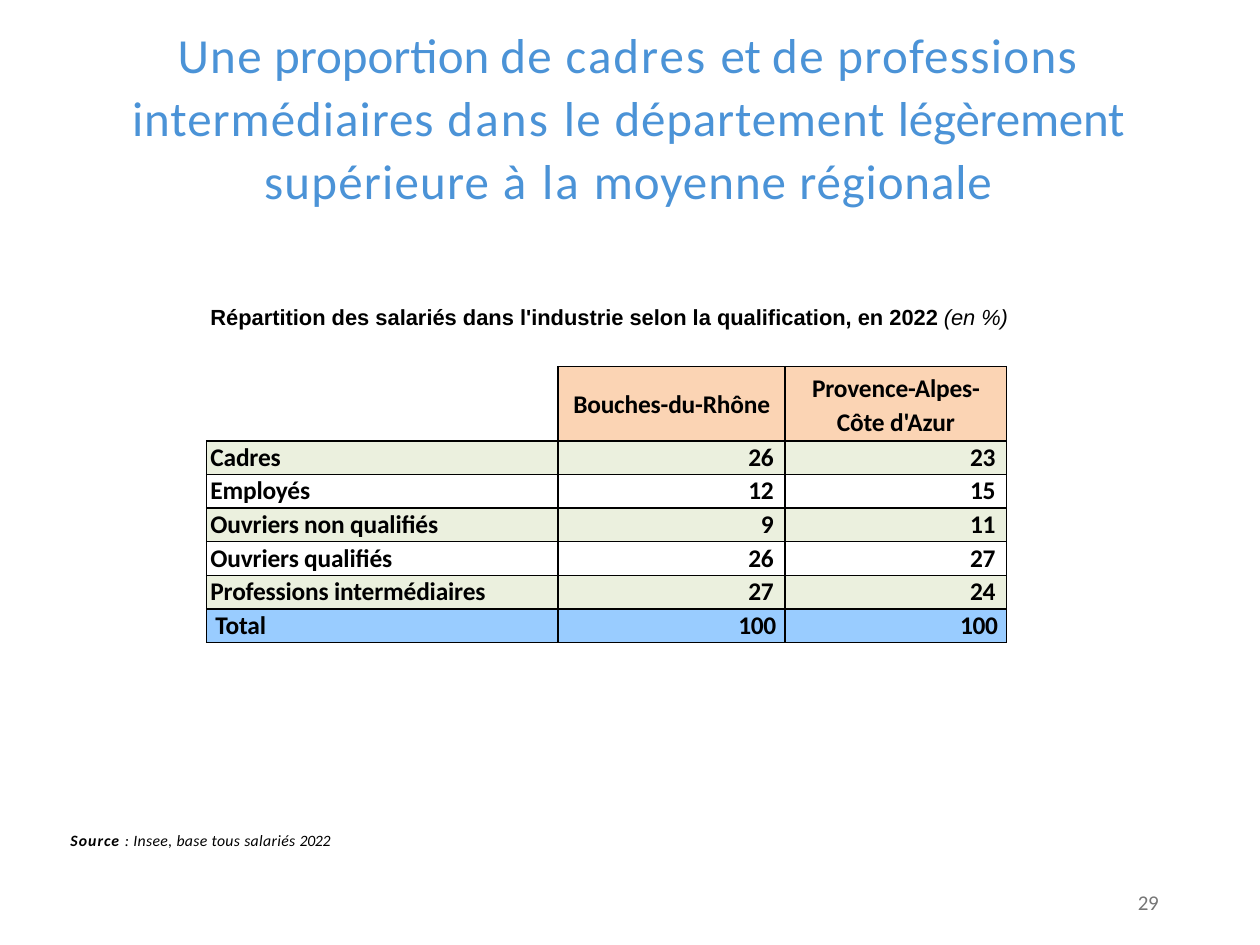
from lxml import etree
from pptx import Presentation
from pptx.dml.color import RGBColor
from pptx.enum.text import MSO_ANCHOR, PP_ALIGN
from pptx.oxml.ns import qn
from pptx.util import Inches, Pt

LEFT, CENTER, RIGHT = PP_ALIGN.LEFT, PP_ALIGN.CENTER, PP_ALIGN.RIGHT
TOP, MIDDLE = MSO_ANCHOR.TOP, MSO_ANCHOR.MIDDLE

BLACK = RGBColor(0x00, 0x00, 0x00)
TITLE_BLUE = RGBColor(0x4B, 0x93, 0xD7)
PAGE_GREY = RGBColor(0x76, 0x76, 0x76)
HEADER_PEACH = RGBColor(0xFB, 0xD4, 0xB4)
BAND_GREEN = RGBColor(0xEB, 0xF0, 0xDE)
TOTAL_BLUE = RGBColor(0x99, 0xCC, 0xFF)

# Each run is (text, letter spacing in points, optional format changes).
TITLE = [
    ("Une", 0.8), (" proportion ", 0), ("de ", 0.8), ("cadres ", 1.2),
    ("et ", 0), ("de professions ", 0.8), ("intermédiaires ", 0.6),
    ("dans ", 1.3), ("le ", 0.8), ("département ", 0.5),
    ("légèrement ", -0.1), ("supérieure ", 0.7), ("à ", 1.4), ("la ", 1.1),
    ("moyenne ", 0.6), ("régionale", 0.5),
]
CAPTION = [
    ("Répartition des salariés dans l'industrie selon la qualification, "
     "en 2022 ", 0),
    ("(en ", 0, {"bold": False, "italic": True}),
    ("%)", -0.2, {"bold": False, "italic": True}),
]
SOURCE = [
    ("Source ", 0.6, {"bold": True}),
    (": Insee, base tous salariés ", 0.2),
    ("2022", -0.2),
]
REGIONS = ["Bouches-du-Rhône", "Provence-Alpes-Côte d'Azur"]
SHARES = [
    ("Cadres", 26, 23),
    ("Employés", 12, 15),
    ("Ouvriers non qualifiés", 9, 11),
    ("Ouvriers qualifiés", 26, 27),
    ("Professions intermédiaires", 27, 24),
    ("Total", 100, 100),
]
COLUMN_WIDTHS = [2.79, 1.8, 1.76]
HEADER_HEIGHT, TABLE_HEIGHT = 0.59, 2.19


def write(frame, runs, size, color=BLACK, font="Calibri", bold=False,
          italic=False, align=LEFT, line_spacing=None):
    paragraph = frame.paragraphs[0]
    paragraph.alignment = align
    if line_spacing:
        paragraph.line_spacing = line_spacing
    for text, spacing, *changes in runs:
        run = paragraph.add_run()
        run.text = text
        run.font.name = font
        run.font.size = Pt(size)
        run.font.color.rgb = color
        look = {"bold": bold, "italic": italic, **(changes[0] if changes else {})}
        run.font.bold = look["bold"]
        run.font.italic = look["italic"]
        if spacing:
            run.font._element.set("spc", str(round(spacing * 100)))


def add_text(slide, left, top, width, height, runs, **text_format):
    box = slide.shapes.add_textbox(
        Inches(left), Inches(top), Inches(width), Inches(height))
    frame = box.text_frame
    frame.word_wrap = True
    frame.margin_left = frame.margin_right = frame.margin_bottom = 0
    frame.margin_top = Inches(0.02)
    write(frame, runs, **text_format)


def set_borders(cell, visible):
    """Draw the named sides in black and hide the others."""
    properties = cell._tc.get_or_add_tcPr()
    for position, side in enumerate("LRTB"):
        line = etree.Element(qn(f"a:ln{side}"), w=str(Pt(1)))
        if side in visible:
            fill = etree.SubElement(line, qn("a:solidFill"))
            etree.SubElement(fill, qn("a:srgbClr"), val=str(BLACK))
        else:
            etree.SubElement(line, qn("a:noFill"))
        properties.insert(position, line)


def fill_cell(cell, text, color, align, side_margins, spacing=-0.1,
              anchor=TOP, line_spacing=None):
    left, right = side_margins
    cell.margin_left, cell.margin_right = Inches(left), Inches(right)
    cell.margin_top, cell.margin_bottom = Inches(0.01), 0
    cell.vertical_anchor = anchor
    if color is None:
        cell.fill.background()
    else:
        cell.fill.solid()
        cell.fill.fore_color.rgb = color
    set_borders(cell, "LRTB")
    write(cell.text_frame, [(text, spacing)], size=14.5, bold=True,
          align=align, line_spacing=line_spacing)


def add_share_table(slide):
    table = slide.shapes.add_table(
        len(SHARES) + 1, len(COLUMN_WIDTHS), Inches(1.64), Inches(2.91),
        Inches(sum(COLUMN_WIDTHS)), Inches(TABLE_HEIGHT)).table
    table.first_row = table.horz_banding = False
    for column, width in zip(table.columns, COLUMN_WIDTHS):
        column.width = Inches(width)
    table.rows[0].height = Inches(HEADER_HEIGHT)

    corner = table.cell(0, 0)
    corner.fill.background()
    set_borders(corner, "RB")
    for column, region in enumerate(REGIONS, start=1):
        fill_cell(table.cell(0, column), region, HEADER_PEACH, CENTER,
                  (0.12, 0.12), anchor=MIDDLE,
                  line_spacing=1.1 if column == 2 else None)

    for row, (category, *values) in enumerate(SHARES, start=1):
        table.rows[row].height = Inches(
            (TABLE_HEIGHT - HEADER_HEIGHT) / len(SHARES))
        is_total = row == len(SHARES)
        color = TOTAL_BLUE if is_total else BAND_GREEN if row % 2 else None
        fill_cell(table.cell(row, 0), category, color, LEFT,
                  (0.07 if is_total else 0.03, 0))
        for column, value in enumerate(values, start=1):
            fill_cell(table.cell(row, column), str(value), color, RIGHT,
                      (0, 0.07 if is_total else 0.09), spacing=-0.2)


def main():
    presentation = Presentation()
    presentation.slide_width, presentation.slide_height = Inches(10), Inches(7.5)
    slide = presentation.slides.add_slide(presentation.slide_layouts[6])

    add_text(slide, 0.99, 0.14, 7.99, 1.53, TITLE, size=28,
             color=TITLE_BLUE, align=CENTER, line_spacing=1.07)
    add_text(slide, 0.56, 6.57, 2.3, 0.18, SOURCE, size=9, italic=True)
    add_share_table(slide)
    add_text(slide, 9.03, 7.04, 0.28, 0.23, [("29", -0.2)], size=12,
             color=PAGE_GREY)
    add_text(slide, 1.67, 2.39, 6.6, 0.24, CAPTION, size=12.5, font="Arial",
             bold=True)
    presentation.save("out.pptx")


if __name__ == "__main__":
    main()
